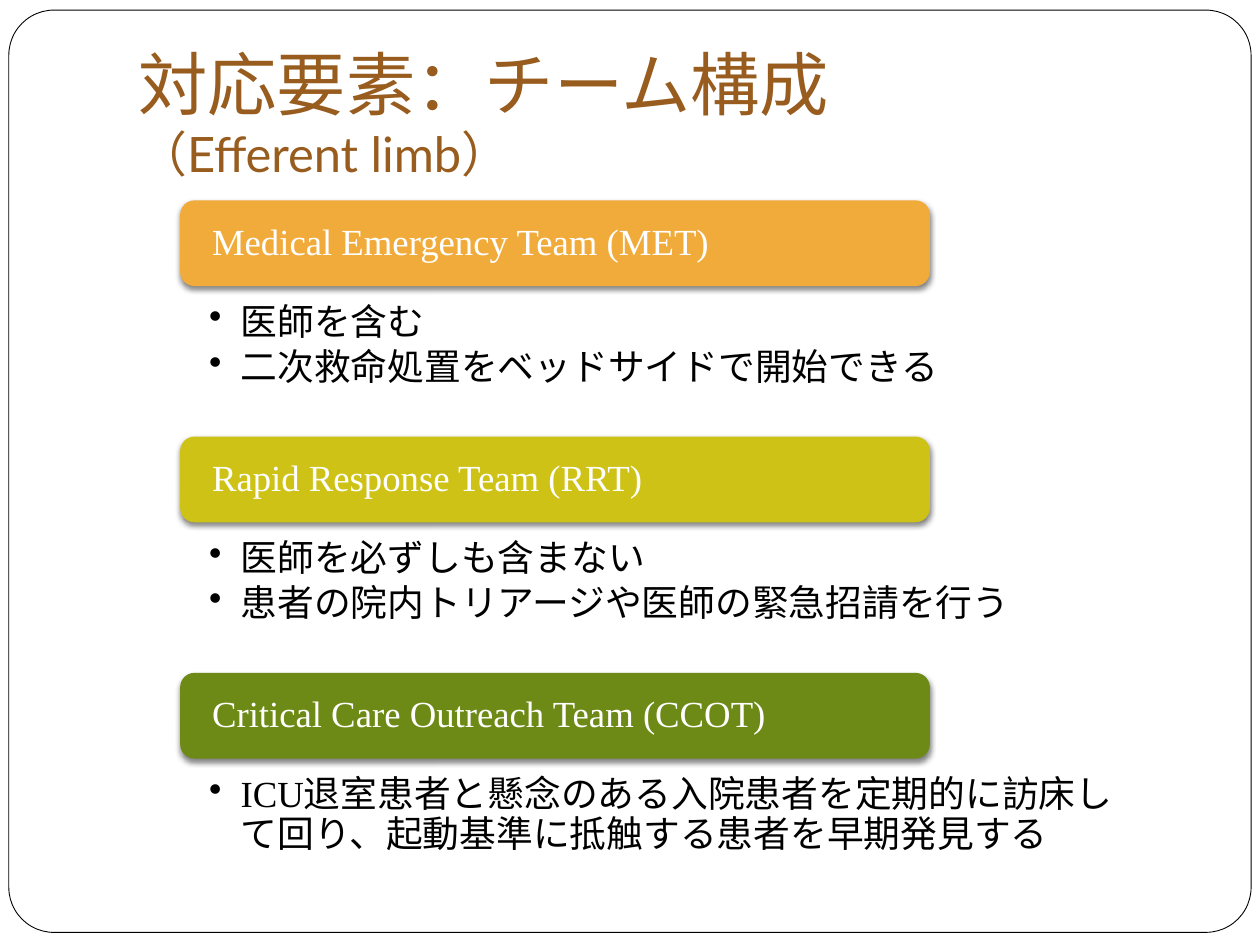
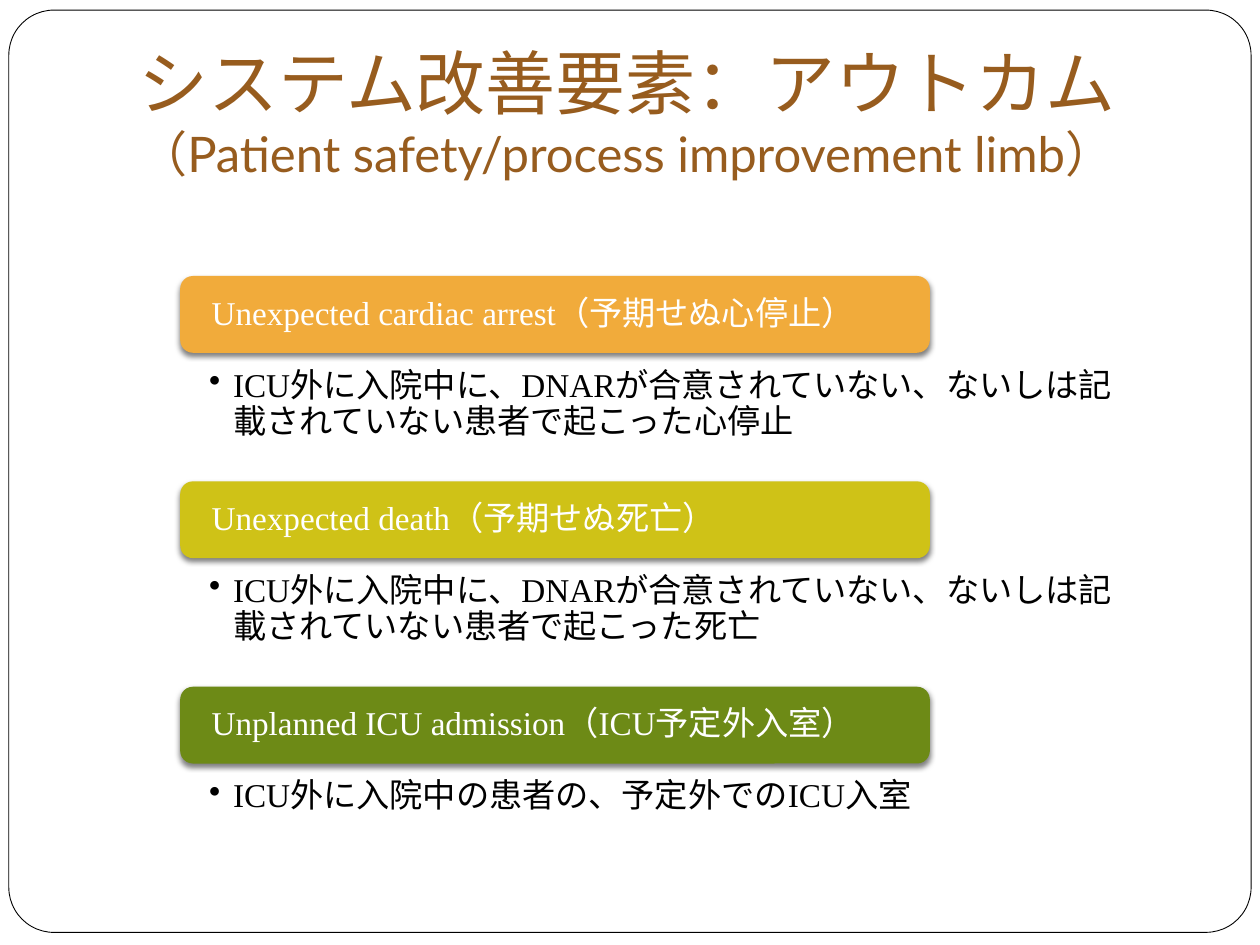
from lxml.etree import SubElement
from pptx import Presentation
from pptx.dml.color import RGBColor
from pptx.enum.shapes import MSO_SHAPE as Shape
from pptx.enum.text import MSO_ANCHOR as Anchor, PP_ALIGN as Align
from pptx.oxml.ns import qn
from pptx.util import Inches, Pt

WHITE = RGBColor(0xFF, 0xFF, 0xFF)
BLACK = RGBColor(0, 0, 0)
BROWN = RGBColor(0x97, 0x5C, 0x1E)
BAR_COLORS = (
    RGBColor(0xF1, 0xAB, 0x3B),
    RGBColor(0xCF, 0xC2, 0x17),
    RGBColor(0x6D, 0x8A, 0x16),
)
TITLE_FONT = "Lato"
BODY_FONT = "Times New Roman"

SLIDES = [
    {
        "title": ("対応要素：チーム構成", 39.6),
        "subtitle": ("（Efferent limb）", 27.9),
        "size": 21, "top": 1.59, "step": 1.875, "bar_height": 0.68,
        "body_inset": 0.48, "indent": 0.25, "body_heights": (1.41, 1.41, 1.34),
        "sections": [
            ("Medical Emergency Team (MET)",
             ["医師を含む", "二次救命処置をベッドサイドで開始できる"]),
            ("Rapid Response Team (RRT)",
             ["医師を必ずしも含まない", "患者の院内トリアージや医師の緊急招請を行う"]),
            ("Critical Care Outreach Team (CCOT)",
             ["ICU退室患者と懸念のある入院患者を定期的に訪床して回り、起動基準に抵触する患者を早期発見する"]),
        ],
    },
    {
        "title": ("システム改善要素：アウトカム", 40),
        "subtitle": ("（Patient safety/process improvement limb）", 28),
        "size": 19, "top": 2.19, "step": 1.63, "bar_height": 0.61,
        "body_inset": 0.43, "indent": 0.19, "body_heights": (1.21, 1.21, 0.9),
        "sections": [
            ("Unexpected cardiac arrest（予期せぬ心停止）",
             ["ICU外に入院中に、DNARが合意されていない、ないしは記載されていない患者で起こった心停止"]),
            ("Unexpected death（予期せぬ死亡）",
             ["ICU外に入院中に、DNARが合意されていない、ないしは記載されていない患者で起こった死亡"]),
            ("Unplanned ICU admission（ICU予定外入室）",
             ["ICU外に入院中の患者の、予定外でのICU入室"]),
        ],
    },
]

LEFT, WIDTH = 1, 8.5
BAR_LEFT, BAR_WIDTH = 1.43, 5.95


def add_box(slide, kind, left, top, width, height, fill):
    shape = slide.shapes.add_shape(
        kind, Inches(left), Inches(top), Inches(width), Inches(height))
    shape.shadow.inherit = False
    shape.fill.solid()
    shape.fill.fore_color.rgb = fill
    shape.line.fill.background()
    return shape


def set_frame(shape, anchor, left, top, right, bottom):
    frame = shape.text_frame
    frame.word_wrap = True
    frame.vertical_anchor = anchor
    frame.margin_left, frame.margin_top = Inches(left), Inches(top)
    frame.margin_right, frame.margin_bottom = Inches(right), Inches(bottom)
    return frame


def write_paragraph(paragraph, text, size, color, space_share):
    paragraph.text = text
    paragraph.alignment = Align.LEFT
    paragraph.line_spacing = 0.9
    paragraph.space_after = Pt(size * space_share)
    paragraph.font.name = BODY_FONT
    paragraph.font.size = Pt(size)
    paragraph.font.color.rgb = color


def add_bullet(paragraph, indent):
    properties = paragraph._p.get_or_add_pPr()
    properties.set("marL", str(Inches(indent)))
    properties.set("indent", str(-Inches(indent)))
    bullet = properties.makeelement(qn("a:buChar"), {"char": "•"})
    properties.find(qn("a:defRPr")).addprevious(bullet)


def add_shadow(shape):
    effects = shape._element.spPr.find(qn("a:effectLst"))
    shadow = SubElement(effects, qn("a:outerShdw"), blurRad=str(Pt(3)),
                        dist=str(Pt(2)), dir="5400000", rotWithShape="0")
    color = SubElement(shadow, qn("a:srgbClr"), val=str(BLACK))
    SubElement(color, qn("a:alpha"), val="50000")


def add_border(slide):
    border = add_box(slide, Shape.ROUNDED_RECTANGLE, 0.07, 0.08, 9.86, 7.32, WHITE)
    border.adjustments[0] = 0.049
    border.line.color.rgb = BLACK
    border.line.width = Pt(0.5)


def add_title(slide, title, subtitle):
    box = slide.shapes.add_textbox(
        Inches(LEFT), Inches(0.3), Inches(WIDTH), Inches(1.25))
    paragraph = set_frame(box, Anchor.BOTTOM, 0.1, 0.05, 0.1, 0.1).paragraphs[0]
    paragraph.font.name = TITLE_FONT
    paragraph.font.color.rgb = BROWN
    for index, (text, size) in enumerate((title, subtitle)):
        if index:
            paragraph.add_line_break()
        run = paragraph.add_run()
        run.text = text
        run.font.size = Pt(size)


def add_section(slide, content, index):
    heading, points = content["sections"][index]
    size, bar_height = content["size"], content["bar_height"]
    top = content["top"] + index * content["step"]

    body = add_box(slide, Shape.RECTANGLE, LEFT, top + bar_height / 2,
                   WIDTH, content["body_heights"][index], WHITE)
    frame = set_frame(body, Anchor.TOP, 0.66, content["body_inset"], 0.66, 0.15)
    for number, point in enumerate(points):
        paragraph = frame.add_paragraph() if number else frame.paragraphs[0]
        write_paragraph(paragraph, point, size, BLACK, 0.15)
        add_bullet(paragraph, content["indent"])

    bar = add_box(slide, Shape.ROUNDED_RECTANGLE, BAR_LEFT, top,
                  BAR_WIDTH, bar_height, BAR_COLORS[index])
    add_shadow(bar)
    frame = set_frame(bar, Anchor.MIDDLE, 0.22, 0, 0.22, 0)
    write_paragraph(frame.paragraphs[0], heading, size, WHITE, 0)


def main():
    presentation = Presentation()
    presentation.slide_width, presentation.slide_height = Inches(10), Inches(7.5)
    for content in SLIDES:
        slide = presentation.slides.add_slide(presentation.slide_layouts[6])
        add_border(slide)
        add_title(slide, content["title"], content["subtitle"])
        for index in range(len(content["sections"])):
            add_section(slide, content, index)
    presentation.save("out.pptx")


if __name__ == "__main__":
    main()
